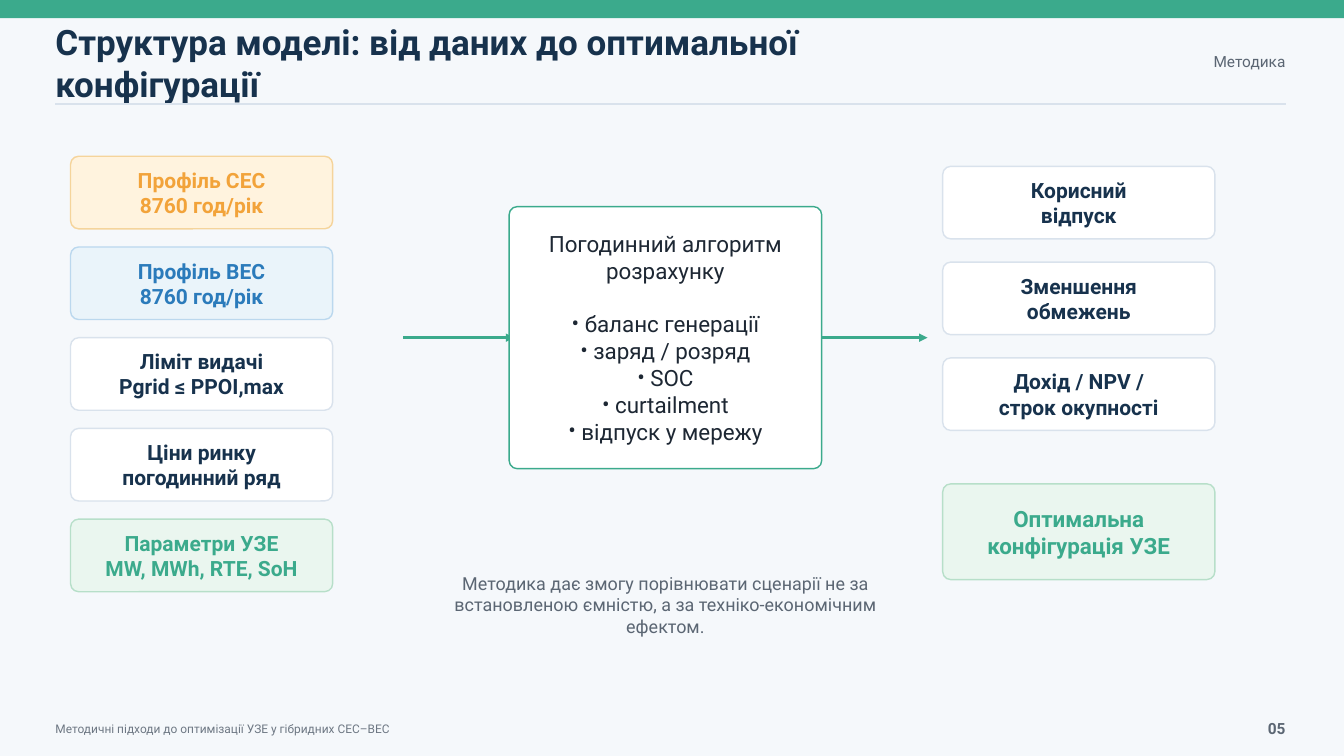
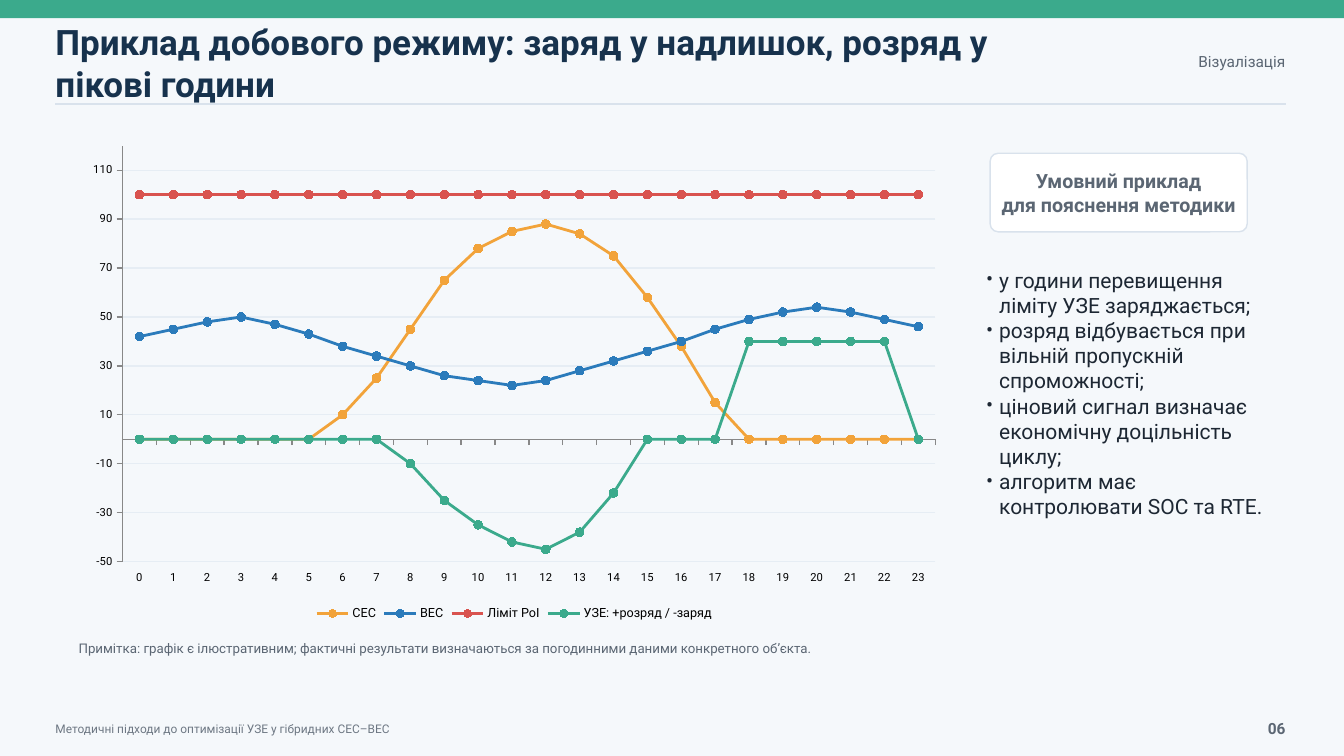
from dataclasses import dataclass
from typing import Any, NamedTuple

from lxml.etree import SubElement
from pptx import Presentation
from pptx.chart.data import CategoryChartData
from pptx.dml.color import RGBColor
from pptx.enum.chart import (XL_CHART_TYPE, XL_LEGEND_POSITION, XL_MARKER_STYLE,
                             XL_TICK_LABEL_POSITION, XL_TICK_MARK)
from pptx.enum.shapes import MSO_CONNECTOR, MSO_SHAPE
from pptx.enum.text import MSO_ANCHOR, MSO_AUTO_SIZE, PP_ALIGN
from pptx.oxml.ns import qn
from pptx.util import Inches, Pt

# Shared look
FONT = "Roboto"
BACKGROUND = RGBColor(0xF5, 0xF8, 0xFB)
WHITE = RGBColor(0xFF, 0xFF, 0xFF)
BLACK = RGBColor(0x00, 0x00, 0x00)
NAVY = RGBColor(0x17, 0x32, 0x4D)
INK = RGBColor(0x1D, 0x27, 0x33)
SLATE = RGBColor(0x5B, 0x66, 0x73)
FOOTER_GRAY = RGBColor(0x6D, 0x77, 0x83)
RULE = RGBColor(0xD9, 0xE2, 0xEC)
GRID = RGBColor(0xE6, 0xED, 0xF4)
AXIS = RGBColor(0x88, 0x88, 0x88)
GREEN = RGBColor(0x3B, 0xAA, 0x8C)
ORANGE = RGBColor(0xF2, 0xA3, 0x3A)
BLUE = RGBColor(0x2B, 0x7B, 0xBB)
RED = RGBColor(0xD9, 0x53, 0x4F)

SLIDE_WIDTH, SLIDE_HEIGHT = 13.33, 7.5
LEFT, RIGHT = 0.55, 12.75
CORNER = 0.08
BULLET_INDENT = 0.13
FOOTER = "Методичні підходи до оптимізації УЗЕ у гібридних СЕС–ВЕС"
TITLE_ONLY, TITLE_AND_BODY = 5, 1


class Area(NamedTuple):
    left: float
    top: float
    width: float
    height: float


class Palette(NamedTuple):
    fill: RGBColor
    line: RGBColor
    text: RGBColor


@dataclass(frozen=True)
class TextStyle:
    size: float
    color: RGBColor
    bold: bool = False
    align: PP_ALIGN = PP_ALIGN.LEFT
    anchor: MSO_ANCHOR = MSO_ANCHOR.MIDDLE


@dataclass(frozen=True)
class Card:
    area: Area
    lines: tuple[str, ...]
    palette: Palette
    size: float = 15


@dataclass(frozen=True)
class Series:
    name: str
    values: list[int]
    color: RGBColor


PLAIN = Palette(WHITE, RULE, NAVY)
MUTED = Palette(WHITE, RULE, SLATE)
SOLAR = Palette(RGBColor(0xFF, 0xF3, 0xDE), RGBColor(0xF5, 0xD4, 0x9B), ORANGE)
WIND = Palette(RGBColor(0xEA, 0xF4, 0xFA), RGBColor(0xBB, 0xD8, 0xEE), BLUE)
STORAGE = Palette(RGBColor(0xEA, 0xF6, 0xEF), RGBColor(0xB7, 0xDF, 0xC9), GREEN)


def set_values(target: Any, values: dict[str, Any]) -> None:
    for name, value in values.items():
        setattr(target, name, value)


def set_font(font: Any, size: float, color: RGBColor, bold: bool = False) -> None:
    set_values(font, {"name": FONT, "size": Pt(size), "bold": bold})
    font.color.rgb = color


def set_line(line: Any, color: RGBColor, width: float) -> None:
    line.color.rgb = color
    line.width = Pt(width)


def place(shape: Any, area: Area) -> None:
    set_values(shape, {name: Inches(value) for name, value in area._asdict().items()})


def add_bullet(para: Any) -> None:
    properties = para._p.get_or_add_pPr()
    properties.set("marL", str(Inches(BULLET_INDENT)))
    properties.set("indent", str(-Inches(BULLET_INDENT)))
    SubElement(properties, qn("a:buFont")).set("typeface", FONT)
    SubElement(properties, qn("a:buChar")).set("char", "•")


def write(shape: Any, lines: tuple[str, ...], style: TextStyle,
          first_bullet: int | None = None, list_gap: float = 0) -> None:
    """Fill a shape with paragraphs; those from first_bullet on form a list."""
    frame = shape.text_frame
    set_values(frame, {"word_wrap": True, "auto_size": MSO_AUTO_SIZE.NONE,
                       "vertical_anchor": style.anchor, "margin_left": 0,
                       "margin_right": 0, "margin_top": 0, "margin_bottom": 0})
    for index, line in enumerate(lines):
        para = frame.paragraphs[0] if index == 0 else frame.add_paragraph()
        gap = list_gap if index == first_bullet else 0
        set_values(para, {"alignment": style.align, "space_before": Pt(gap)})
        if first_bullet is not None and index >= first_bullet:
            add_bullet(para)
        span = para.add_run()
        span.text = line
        set_font(span.font, style.size, style.color, style.bold)


def add_text(page: Any, area: Area, text: str, style: TextStyle) -> None:
    box = page.shapes.add_textbox(0, 0, 0, 0)
    place(box, area)
    write(box, (text,), style)


def add_panel(page: Any, area: Area, fill: RGBColor, line: RGBColor) -> Any:
    panel = page.shapes.add_shape(MSO_SHAPE.ROUNDED_RECTANGLE, 0, 0, 0, 0)
    place(panel, area)
    panel.adjustments[0] = CORNER / min(area.width, area.height)
    panel.shadow.inherit = False
    panel.fill.solid()
    panel.fill.fore_color.rgb = fill
    set_line(panel.line, line, 1)
    return panel


def add_card(page: Any, card: Card) -> None:
    panel = add_panel(page, card.area, card.palette.fill, card.palette.line)
    write(panel, card.lines,
          TextStyle(card.size, card.palette.text, True, PP_ALIGN.CENTER))


def add_rule(page: Any, left: float, right: float, top: float, color: RGBColor,
             width: float, arrow: bool = False) -> None:
    rule = page.shapes.add_connector(MSO_CONNECTOR.STRAIGHT, Inches(left), Inches(top),
                                     Inches(right), Inches(top))
    set_line(rule.line, color, width)
    if arrow:
        SubElement(rule.line._get_or_add_ln(), qn("a:tailEnd")).set("type", "triangle")
    SubElement(rule._element.spPr, qn("a:effectLst"))


def add_page(deck: Any, layout: int, number: int, title: str, section: str) -> Any:
    """Add a slide with the band, title, section label and footer."""
    page = deck.slides.add_slide(deck.slide_layouts[layout])
    band = page.shapes.add_shape(MSO_SHAPE.RECTANGLE, 0, 0,
                                 Inches(SLIDE_WIDTH), Inches(0.18))
    band.shadow.inherit = False
    band.fill.solid()
    band.fill.fore_color.rgb = GREEN
    band.line.fill.background()

    place(page.shapes.title, Area(LEFT, 0.35, 9.4, 0.54))
    write(page.shapes.title, (title,), TextStyle(25, NAVY, True))
    add_text(page, Area(10.3, 0.43, 2.45, 0.35), section,
             TextStyle(11, SLATE, align=PP_ALIGN.RIGHT))
    add_rule(page, LEFT, RIGHT, 1.03, RULE, 1)
    add_text(page, Area(LEFT, 7.12, 8.5, 0.22), FOOTER, TextStyle(8.5, FOOTER_GRAY))
    add_text(page, Area(12.2, 7.05, 0.55, 0.35), f"{number:02}",
             TextStyle(11, SLATE, True, PP_ALIGN.RIGHT))
    return page


def add_model_page(deck: Any) -> None:
    page = add_page(deck, TITLE_ONLY, 5,
                    "Структура моделі: від даних до оптимальної конфігурації", "Методика")
    for left in (4, 8.1):
        add_rule(page, left, left + 1.1, 3.35, GREEN, 2, arrow=True)

    # Inputs
    inputs = [
        (("Профіль СЕС", "8760 год/рік"), SOLAR),
        (("Профіль ВЕС", "8760 год/рік"), WIND),
        (("Ліміт видачі", "Pgrid ≤ PPOI,max"), PLAIN),
        (("Ціни ринку", "погодинний ряд"), PLAIN),
        (("Параметри УЗЕ", "MW, MWh, RTE, SoH"), STORAGE),
    ]
    for row, (lines, palette) in enumerate(inputs):
        add_card(page, Card(Area(0.7, 1.55 + 0.9 * row, 2.6, 0.72), lines, palette))

    # Algorithm
    algorithm = add_panel(page, Area(5.05, 2.05, 3.1, 2.6), WHITE, GREEN)
    write(algorithm,
          ("Погодинний алгоритм розрахунку", "баланс генерації", "заряд / розряд",
           "SOC", "curtailment", "відпуск у мережу"),
          TextStyle(16, INK, align=PP_ALIGN.CENTER), first_bullet=1, list_gap=19)

    # Results
    results = [("Корисний", "відпуск"), ("Зменшення", "обмежень"),
               ("Дохід / NPV /", "строк окупності")]
    for row, lines in enumerate(results):
        add_card(page, Card(Area(9.35, 1.65 + 0.95 * row, 2.7, 0.72), lines, PLAIN))
    add_card(page, Card(Area(9.35, 4.8, 2.7, 0.95),
                        ("Оптимальна", "конфігурація УЗЕ"), STORAGE, 16))

    add_text(page, Area(4.25, 5.68, 4.7, 0.48),
             "Методика дає змогу порівнювати сценарії не за встановленою ємністю, "
             "а за техніко-економічним ефектом.",
             TextStyle(12.8, SLATE, align=PP_ALIGN.CENTER, anchor=MSO_ANCHOR.TOP))


def add_day_chart(page: Any, area: Area, series_list: list[Series]) -> None:
    data = CategoryChartData()
    data.categories = [str(hour) for hour in range(24)]
    for series in series_list:
        data.add_series(series.name, series.values)
    chart = page.shapes.add_chart(XL_CHART_TYPE.LINE_MARKERS,
                                  *(Inches(value) for value in area), data).chart
    set_font(chart.font, 10, BLACK)
    set_values(chart, {"has_title": False, "has_legend": True})
    set_values(chart.legend, {"position": XL_LEGEND_POSITION.BOTTOM,
                              "include_in_layout": False})
    set_font(chart.legend.font, 9, BLACK)

    # Axes
    for axis in (chart.category_axis, chart.value_axis):
        axis.major_tick_mark = XL_TICK_MARK.OUTSIDE
        set_font(axis.tick_labels.font, 8, BLACK)
        set_line(axis.format.line, AXIS, 1)
    chart.category_axis.tick_label_position = XL_TICK_LABEL_POSITION.LOW
    set_values(chart.value_axis, {"minimum_scale": -50, "maximum_scale": 120,
                                  "major_unit": 20, "has_major_gridlines": True})
    set_line(chart.value_axis.major_gridlines.format.line, GRID, 1)

    # Series
    chart.plots[0].vary_by_categories = False
    for series, line in zip(series_list, chart.plots[0].series):
        line.smooth = False
        set_line(line.format.line, series.color, 2)
        set_values(line.marker, {"style": XL_MARKER_STYLE.CIRCLE, "size": 6})
        line.marker.format.fill.solid()
        line.marker.format.fill.fore_color.rgb = series.color
        line.marker.format.line.color.rgb = series.color


def add_day_page(deck: Any) -> None:
    page = add_page(deck, TITLE_AND_BODY, 6,
                    "Приклад добового режиму: заряд у надлишок, розряд у пікові години",
                    "Візуалізація")
    add_day_chart(page, Area(0.75, 1.35, 8.7, 4.85), [
        Series("СЕС", [0] * 6 + [10, 25, 45, 65, 78, 85, 88, 84, 75, 58, 38, 15] + [0] * 6,
               ORANGE),
        Series("ВЕС", [42, 45, 48, 50, 47, 43, 38, 34, 30, 26, 24, 22,
                       24, 28, 32, 36, 40, 45, 49, 52, 54, 52, 49, 46], BLUE),
        Series("Ліміт PoI", [100] * 24, RED),
        Series("УЗЕ: +розряд / -заряд",
               [0] * 8 + [-10, -25, -35, -42, -45, -38, -22] + [0] * 3 + [40] * 5 + [0],
               GREEN),
    ])
    add_card(page, Card(Area(9.82, 1.52, 2.55, 0.78),
                        ("Умовний приклад", "для пояснення методики"), MUTED, 14))

    # Conclusions
    body = page.placeholders[1]
    place(body, Area(9.78, 2.65, 2.8, 2.4))
    write(body,
          ("у години перевищення ліміту УЗЕ заряджається;",
           "розряд відбувається при вільній пропускній спроможності;",
           "ціновий сигнал визначає економічну доцільність циклу;",
           "алгоритм має контролювати SOC та RTE."),
          TextStyle(15, INK, anchor=MSO_ANCHOR.TOP), first_bullet=0)

    add_text(page, Area(0.78, 6.35, 10.3, 0.26),
             "Примітка: графік є ілюстративним; фактичні результати визначаються "
             "за погодинними даними конкретного об’єкта.",
             TextStyle(9.5, SLATE, anchor=MSO_ANCHOR.TOP))


def main() -> None:
    deck = Presentation()
    set_values(deck, {"slide_width": Inches(SLIDE_WIDTH),
                      "slide_height": Inches(SLIDE_HEIGHT)})
    fill = deck.slide_master.background.fill
    fill.solid()
    fill.fore_color.rgb = BACKGROUND
    add_model_page(deck)
    add_day_page(deck)
    deck.save("out.pptx")


if __name__ == "__main__":
    main()
